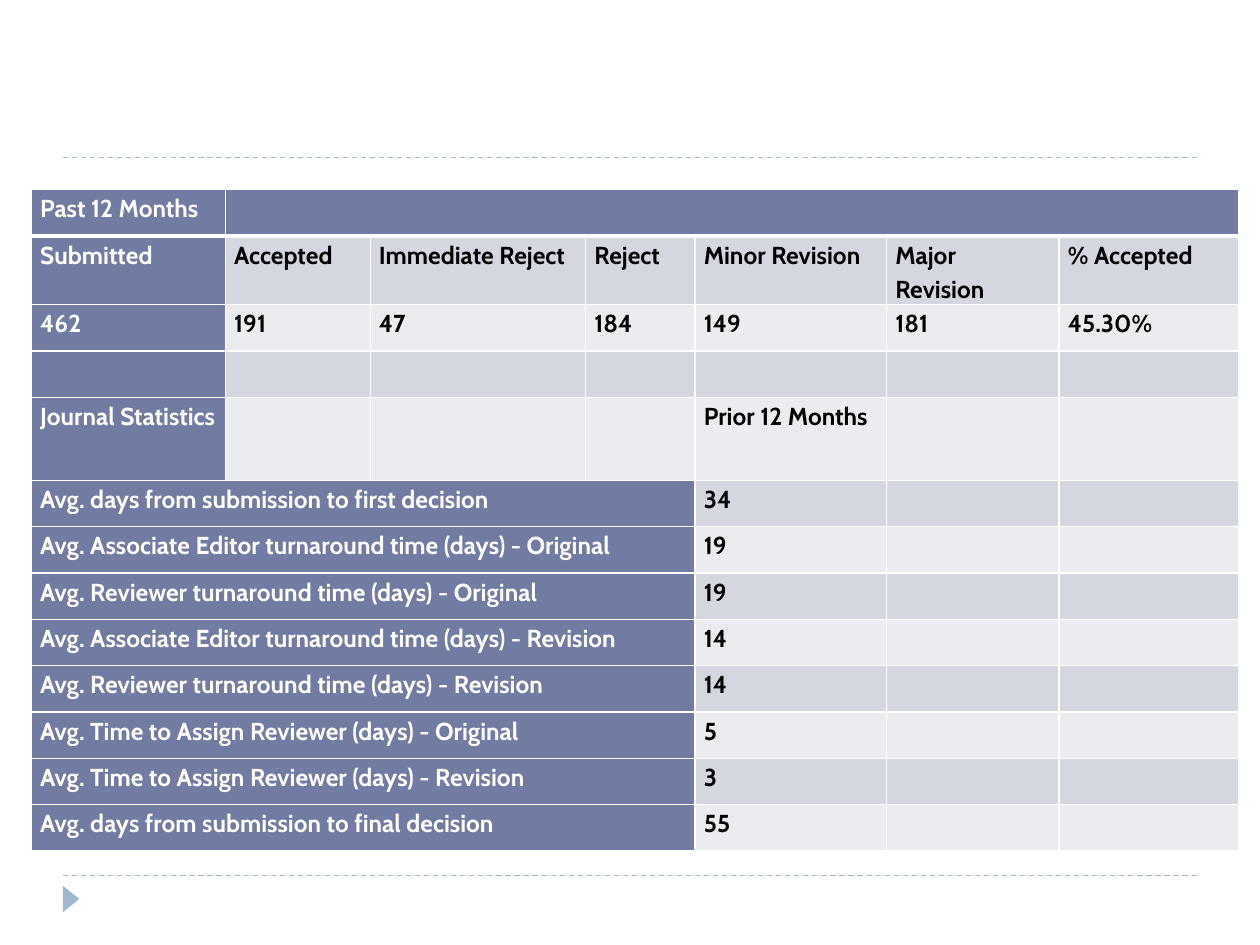
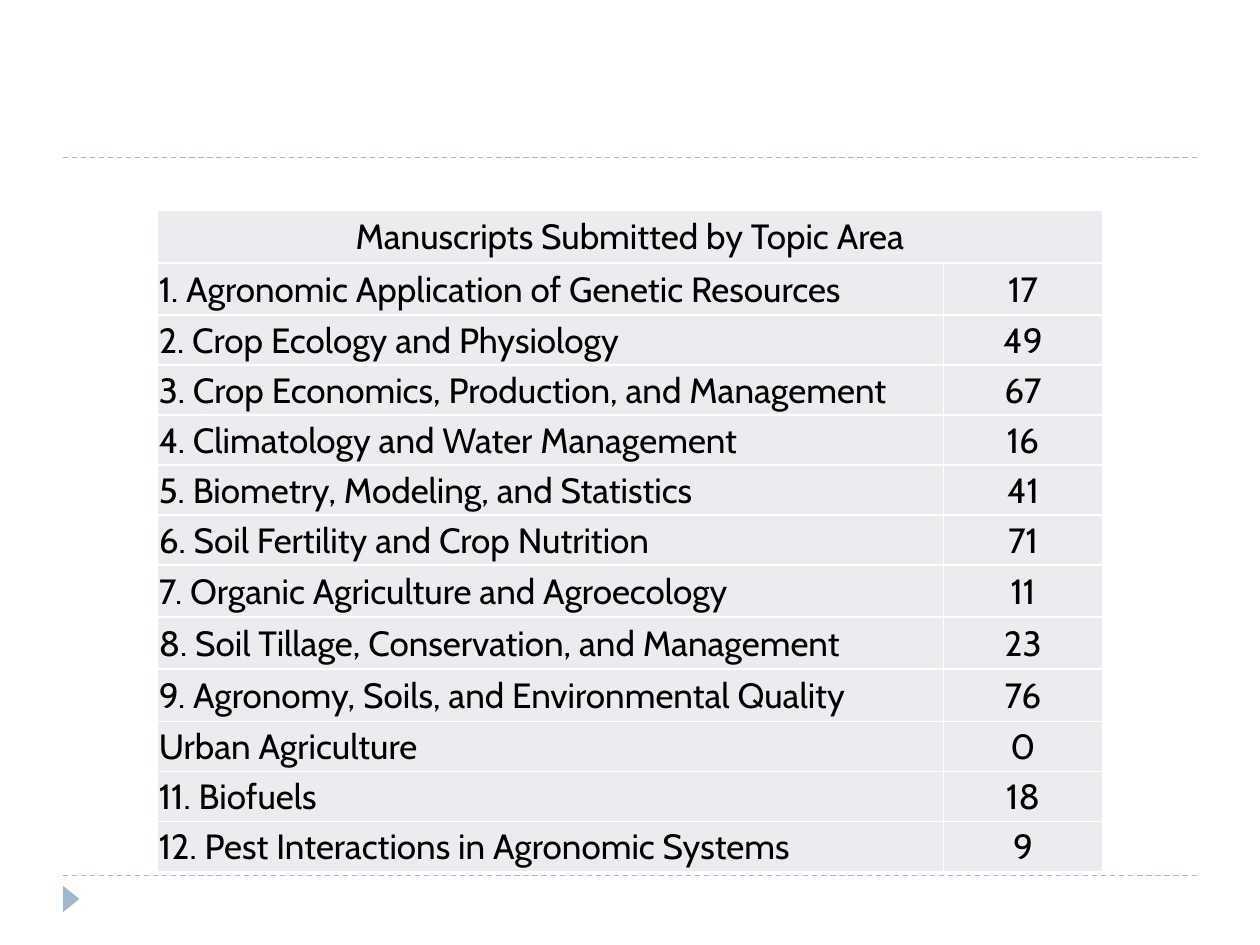
from lxml import etree
from pptx import Presentation
from pptx.dml.color import RGBColor
from pptx.enum import dml, shapes, text
from pptx.oxml import ns
from pptx.util import Pt

FONT = "Cabin"
COLORS = {
    "header": "727CA3",
    "band_dark": "D5D7E0",
    "band_light": "EBECF0",
    "accent": "9FB8CD",
    "white": "FFFFFF",
    "black": "000000",
}

DECISION_COLUMNS = [110.8, 82.8, 123.1, 62.6, 109.4, 98.6, 102.9]
DECISION_HEADINGS = ["Submitted", "Accepted", "Immediate Reject", "Reject",
                     "Minor Revision", "Major Revision", "% Accepted"]
DECISION_VALUES = ["462", "191", "47", "184", "149", "181", "45.30%"]
TURNAROUND_DAYS = [
    ("Avg. days from submission to first decision", "34"),
    ("Avg. Associate Editor turnaround time (days) - Original", "19"),
    ("Avg. Reviewer turnaround time (days) - Original", "19"),
    ("Avg. Associate Editor turnaround time (days) - Revision", "14"),
    ("Avg. Reviewer turnaround time (days) - Revision", "14"),
    ("Avg. Time to Assign Reviewer (days) - Original", "5"),
    ("Avg. Time to Assign Reviewer (days) - Revision", "3"),
    ("Avg. days from submission to final decision", "55"),
]

TOPICS = [
    ("1. Agronomic Application of Genetic Resources", "17"),
    ("2. Crop Ecology and Physiology", "49"),
    ("3. Crop Economics, Production, and Management", "67"),
    ("4. Climatology and Water Management", "16"),
    ("5. Biometry, Modeling, and Statistics", "41"),
    ("6. Soil Fertility and Crop Nutrition", "71"),
    ("7. Organic Agriculture and Agroecology", "11"),
    ("8. Soil Tillage, Conservation, and Management", "23"),
    ("9. Agronomy, Soils, and Environmental Quality", "76"),
    ("Urban Agriculture", "0"),
    ("11. Biofuels", "18"),
    ("12. Pest Interactions in Agronomic Systems", "9"),
]
TALL_TOPIC_ROWS = {0, 1, 7, 8, 9}


def color(name):
    return RGBColor.from_string(COLORS[name])


def add_dashed_rule(slide, top):
    rule = slide.shapes.add_connector(
        shapes.MSO_CONNECTOR.STRAIGHT, Pt(36), Pt(top), Pt(684), Pt(top))
    rule.line.color.rgb = color("accent")
    rule.line.width = Pt(0.75)
    rule.line.dash_style = dml.MSO_LINE.DASH
    etree.SubElement(rule._element.spPr, ns.qn("a:effectLst"))


def add_corner_marker(slide):
    marker = slide.shapes.add_shape(
        shapes.MSO_SHAPE.ISOSCELES_TRIANGLE, Pt(33.1), Pt(509), Pt(15.1), Pt(9.4))
    marker.rotation = 90
    marker.shadow.inherit = False
    marker.fill.solid()
    marker.fill.fore_color.rgb = color("accent")
    marker.line.fill.background()


def add_framed_slide(presentation):
    """Add a blank slide with the shared rules and corner marker."""
    slide = presentation.slides.add_slide(presentation.slide_layouts[6])
    for top in (500.4, 90):
        add_dashed_rule(slide, top)
    add_corner_marker(slide)
    return slide


def add_plain_table(slide, left, top, widths, heights):
    frame = slide.shapes.add_table(len(heights), len(widths), Pt(left), Pt(top),
                                   Pt(sum(widths)), Pt(sum(heights)))
    table = frame.table
    table.first_row = table.horz_banding = False
    for column, width in zip(table.columns, widths):
        column.width = Pt(width)
    for row, height in zip(table.rows, heights):
        row.height = Pt(height)
    return table


def set_borders(cell, top=1, bottom=1):
    properties = cell._tc.get_or_add_tcPr()
    for side, width in (("L", 1), ("R", 1), ("T", top), ("B", bottom)):
        line = etree.SubElement(properties, ns.qn(f"a:ln{side}"), w=str(Pt(width)))
        fill = etree.SubElement(line, ns.qn("a:solidFill"))
        etree.SubElement(fill, ns.qn("a:srgbClr"), val=COLORS["white"])


def set_cell(cell, content, fill, margins, size, font_color="black", bold=False,
             alignment=text.PP_ALIGN.LEFT, line_spacing=None):
    cell.margin_left, cell.margin_top, cell.margin_right, cell.margin_bottom = map(Pt, margins)
    cell.fill.solid()
    cell.fill.fore_color.rgb = color(fill)
    paragraph = cell.text_frame.paragraphs[0]
    paragraph.text = content
    paragraph.alignment = alignment
    paragraph.line_spacing = line_spacing
    for run in paragraph.runs:
        run.font.name = FONT
        run.font.size = Pt(size)
        run.font.bold = bold
        run.font.color.rgb = color(font_color)


def add_journal_statistics(slide):
    blank = [""] * 7
    rows = [
        ["Past 12 Months"] + blank[1:],
        DECISION_HEADINGS,
        DECISION_VALUES,
        blank,
        ["Journal Statistics", "", "", "", "Prior 12 Months", "", ""],
    ]
    first_turnaround = len(rows)
    rows += [[label, "", "", "", days, "", ""] for label, days in TURNAROUND_DAYS]
    heights = [47.5 if index == 4 else 26.5 for index in range(len(rows))]
    table = add_plain_table(slide, 18, 108.4, DECISION_COLUMNS, heights)

    for row_index, row in enumerate(rows):
        band = "band_dark" if row_index % 2 else "band_light"
        for column_index, content in enumerate(row):
            is_header = row_index == 0 or column_index == 0
            cell = table.cell(row_index, column_index)
            set_borders(cell, top=3 if row_index == 1 else 1,
                        bottom=3 if row_index == 0 else 1)
            set_cell(cell, content, "header" if is_header else band, (5, 0, 5, 0), 14,
                     "white" if is_header else "black", bold=True, line_spacing=1.15)

    table.cell(0, 1).merge(table.cell(0, 6))
    for row_index in range(first_turnaround, len(rows)):
        table.cell(row_index, 0).merge(table.cell(row_index, 3))


def add_topic_counts(slide):
    rows = [("Manuscripts Submitted by Topic Area", "")] + TOPICS
    heights = [29.8 if index in TALL_TOPIC_ROWS else 28.6 for index in range(len(rows))]
    table = add_plain_table(slide, 90, 120.4, [449.2, 90.8], heights)

    for row_index, row in enumerate(rows):
        for column_index, content in enumerate(row):
            centred = row_index == 0 or column_index == 1
            cell = table.cell(row_index, column_index)
            cell.vertical_anchor = text.MSO_ANCHOR.MIDDLE
            set_borders(cell)
            set_cell(cell, content, "band_light", (0.75, 0.75, 0.75, 0), 20,
                     alignment=text.PP_ALIGN.CENTER if centred else text.PP_ALIGN.LEFT)
    table.cell(0, 0).merge(table.cell(0, 1))


def main():
    presentation = Presentation()
    presentation.slide_width, presentation.slide_height = Pt(720), Pt(540)
    add_journal_statistics(add_framed_slide(presentation))
    add_topic_counts(add_framed_slide(presentation))
    presentation.save("out.pptx")


if __name__ == "__main__":
    main()
